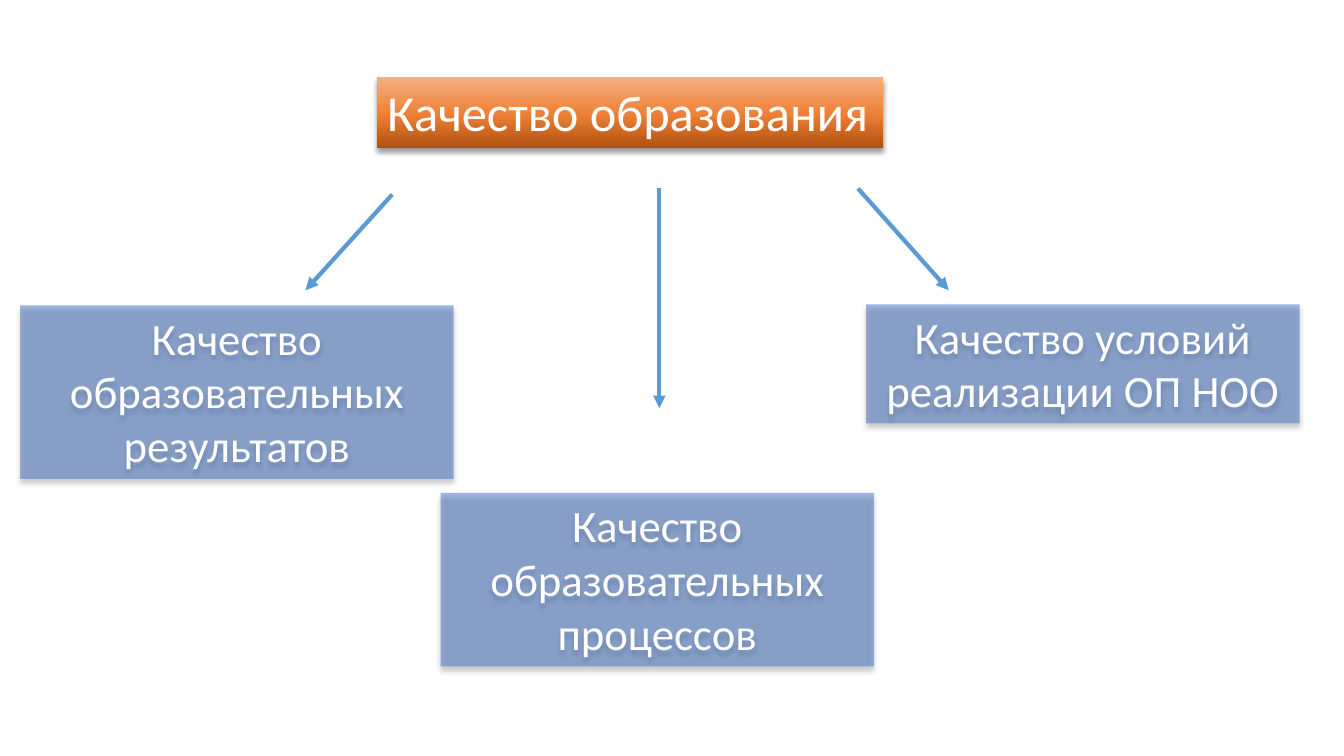
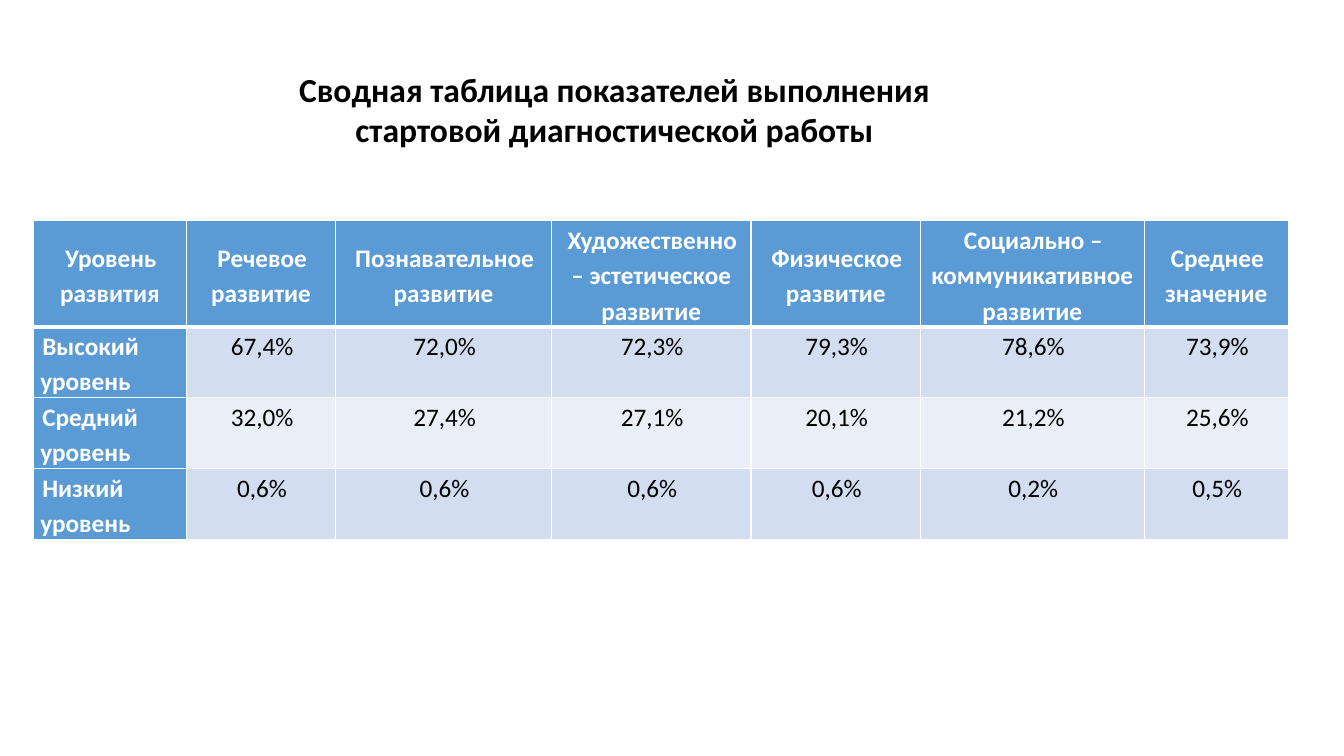
import copy

import pptx
import pptx.dml.color
import pptx.enum.shapes
import pptx.enum.text
import pptx.oxml
import pptx.oxml.ns
import pptx.util

Inches = pptx.util.Inches
Pt = pptx.util.Pt
qn = pptx.oxml.ns.qn
ALIGN = pptx.enum.text.PP_ALIGN
ANCHOR = pptx.enum.text.MSO_ANCHOR
RECTANGLE = pptx.enum.shapes.MSO_SHAPE.RECTANGLE

# Shared look
FONT = "Calibri"
WHITE, BLACK = "FFFFFF", "000000"
BLUE, BOX_BLUE = "5B9BD5", "4472C4"
BANDS = ["D2DEEF", "EAEFF7"]
HEADING_GRADIENT = [(0, "B0500F"), (0.48, "EE8137"), (1, "F4B183")]
NAMESPACE = pptx.oxml.ns.nsdecls("a")
SHADOW = (
    f'<a:effectLst {NAMESPACE}><a:outerShdw blurRad="{Pt(4)}" dist="{Pt(3)}" dir="5400000" '
    'rotWithShape="0"><a:srgbClr val="000000"><a:alpha val="40000"/></a:srgbClr>'
    "</a:outerShdw></a:effectLst>"
)


def color(hex_code):
    return pptx.dml.color.RGBColor.from_string(hex_code)


def write_text(frame, text, size=18, text_color=WHITE, bold=False, align=ALIGN.CENTER,
               wrap=True, grow=True, line_spacing=None, space_after=None, indent=None):
    frame.word_wrap = wrap
    if grow:
        frame.auto_size = pptx.enum.text.MSO_AUTO_SIZE.SHAPE_TO_FIT_TEXT
    paragraph = frame.paragraphs[0]
    paragraph.alignment = align
    paragraph.line_spacing = line_spacing
    paragraph.space_after = space_after
    if indent is not None:
        properties = paragraph._p.get_or_add_pPr()
        properties.set("marL", "0")
        properties.set("indent", str(indent))
    run = paragraph.add_run()
    run.text = text
    run.font.name = FONT
    run.font.size = Pt(size)
    run.font.bold = bold
    run.font.color.rgb = color(text_color)


presentation = pptx.Presentation()
presentation.slide_width = Inches(13.33)
presentation.slide_height = Inches(7.5)
blank = presentation.slide_layouts[6]

# Slide 1: quality of education and its three parts
slide = presentation.slides.add_slide(blank)

# Boxes: the heading, then the parts
BOX_WIDTH = 4.3
boxes = [
    ("Качество образования", 3.74, 0.76, 5.02, 0.71),
    ("Качество образовательных результатов", 0.2, 3.03, BOX_WIDTH, 1.72),
    ("Качество образовательных процессов", 4.37, 4.89, BOX_WIDTH, 1.72),
    ("Качество условий реализации ОП НОО", 8.59, 3.02, BOX_WIDTH, 1.18),
]
for index, (text, *place) in enumerate(boxes):
    is_heading = index == 0
    shape = slide.shapes.add_shape(RECTANGLE, *[Inches(length) for length in place])
    shape.line.fill.background()
    shape.text_frame.vertical_anchor = ANCHOR.TOP
    properties = shape._element.spPr
    if is_heading:
        shape.fill.gradient()
        shape.fill.gradient_angle = 90
        stop_list = properties.find(".//" + qn("a:gsLst"))
        stop_list.append(copy.deepcopy(stop_list[0]))
        for stop, (position, stop_color) in zip(shape.fill.gradient_stops, HEADING_GRADIENT):
            stop.position = position
            stop.color.rgb = color(stop_color)
        write_text(shape.text_frame, text, size=36, align=ALIGN.LEFT, wrap=False)
    else:
        shape.fill.solid()
        shape.fill.fore_color.rgb = color(BOX_BLUE)
        fill_color = properties.find(qn("a:solidFill"))[0]
        fill_color.append(pptx.oxml.parse_xml(f'<a:alpha {NAMESPACE} val="50000"/>'))
        write_text(shape.text_frame, text, size=32)
    properties.append(pptx.oxml.parse_xml(SHADOW))

# Arrows from the heading to the parts
arrows = [(3.89, 1.93, 3.03, 2.88), (6.54, 1.87, 6.54, 4.05), (8.51, 1.87, 9.41, 2.88)]
for ends in arrows:
    arrow = slide.shapes.add_connector(
        pptx.enum.shapes.MSO_CONNECTOR.STRAIGHT, *[Inches(length) for length in ends])
    arrow.line.color.rgb = color(BLUE)
    arrow.line.width = Pt(3)
    arrow.line._get_or_add_ln().append(
        pptx.oxml.parse_xml(f'<a:tailEnd {NAMESPACE} type="triangle"/>'))
    arrow._element.spPr.append(pptx.oxml.parse_xml(f"<a:effectLst {NAMESPACE}/>"))

# Slide 2: summary table
slide = presentation.slides.add_slide(blank)

rows = [
    ["Уровень развития", "Речевое развитие", "Познавательное развитие",
     "Художественно – эстетическое развитие", "Физическое развитие",
     "Социально – коммуникативное развитие", "Среднее значение"],
    ["Высокий уровень", "67,4%", "72,0%", "72,3%", "79,3%", "78,6%", "73,9%"],
    ["Средний уровень", "32,0%", "27,4%", "27,1%", "20,1%", "21,2%", "25,6%"],
    ["Низкий уровень", "0,6%", "0,6%", "0,6%", "0,6%", "0,2%", "0,5%"],
]
column_widths = [1.52, 1.48, 2.14, 1.98, 1.68, 2.22, 1.43]
row_heights = [1.04, 0.7, 0.7, 0.7]
table = slide.shapes.add_table(
    len(rows), len(column_widths), Inches(0.33), Inches(2.19),
    Inches(sum(column_widths)), Inches(sum(row_heights))).table
for column, width in zip(table.columns, column_widths):
    column.width = Inches(width)
for row, height in zip(table.rows, row_heights):
    row.height = Inches(height)

for row_index, row_texts in enumerate(rows):
    for column_index, text in enumerate(row_texts):
        cell = table.cell(row_index, column_index)
        is_header = row_index == 0
        is_label = is_header or column_index == 0
        cell.margin_left = cell.margin_right = Inches(0.07)
        cell.margin_top = cell.margin_bottom = 0
        cell.vertical_anchor = ANCHOR.MIDDLE if is_header else ANCHOR.TOP

        # White borders, thicker under the header row
        border_widths = {"lnL": 1, "lnR": 1, "lnT": 3 if row_index == 1 else 1,
                         "lnB": 3 if is_header else 1}
        for side, width in border_widths.items():
            cell._tc.get_or_add_tcPr().append(pptx.oxml.parse_xml(
                f'<a:{side} {NAMESPACE} w="{Pt(width)}"><a:solidFill>'
                f'<a:srgbClr val="{WHITE}"/></a:solidFill></a:{side}>'))
        cell.fill.solid()
        cell.fill.fore_color.rgb = color(BLUE if is_label else BANDS[(row_index - 1) % 2])

        write_text(cell.text_frame, text, bold=is_label,
                   text_color=WHITE if is_label else BLACK,
                   align=ALIGN.LEFT if is_label and not is_header else ALIGN.CENTER,
                   grow=False, line_spacing=1.15, space_after=Pt(4), indent=Inches(0.02))

# Table title
title = slide.shapes.add_textbox(Inches(2.76), Inches(0.63), Inches(6.67), Inches(0.91))
write_text(title.text_frame,
           "Сводная таблица показателей выполнения стартовой диагностической работы",
           size=24, text_color=BLACK, bold=True)

presentation.save("out.pptx")
